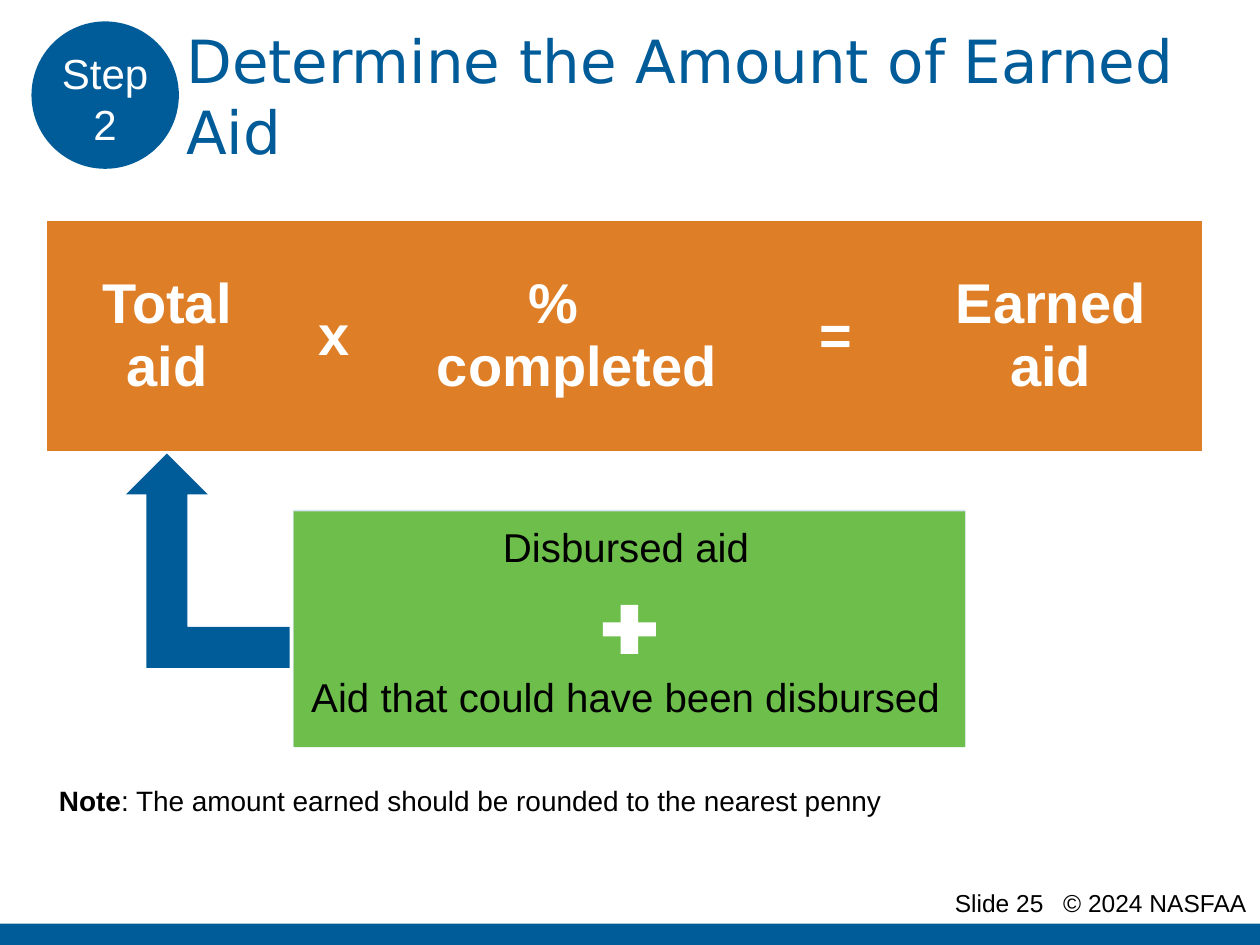
from dataclasses import dataclass

from lxml import etree
from pptx import Presentation
from pptx.dml.color import RGBColor
from pptx.enum.shapes import MSO_SHAPE
from pptx.enum.text import MSO_ANCHOR, PP_ALIGN
from pptx.oxml.ns import qn
from pptx.util import Inches, Pt

LEFT, CENTER = PP_ALIGN.LEFT, PP_ALIGN.CENTER
TOP, MIDDLE = MSO_ANCHOR.TOP, MSO_ANCHOR.MIDDLE
RECTANGLE, OVAL = MSO_SHAPE.RECTANGLE, MSO_SHAPE.OVAL
CROSS, BENT_ARROW = MSO_SHAPE.CROSS, MSO_SHAPE.BENT_UP_ARROW
NO_TABLE_STYLE = "{2D5ABB26-0587-4C30-8999-92F81FD0307C}"


@dataclass(frozen=True)
class Theme:
    """Colours, fonts and type sizes of the slide."""
    blue: str = "005B99"
    orange: str = "DE7E26"
    green: str = "6DBE4B"
    pale_blue: str = "D0D8E8"
    pale_line: str = "DBE5F1"
    white: str = "FFFFFF"
    black: str = "000000"
    body_font: str = "Arial"
    title_font: str = "DejaVu Sans"
    title_size: int = 34
    formula_size: int = 32
    step_size: int = 24
    aid_size: int = 23
    note_size: int = 16
    footer_size: int = 14


THEME = Theme()


def apply_format(target, values):
    """Set every named attribute on the target."""
    for name, value in values.items():
        setattr(target, name, value)


def insets(left, top, right, bottom):
    """Return the four margins of a text area as format values."""
    sides = ("left", "top", "right", "bottom")
    return {f"margin_{side}": Inches(gap)
            for side, gap in zip(sides, (left, top, right, bottom))}


def style_run(run, size, color, font=THEME.body_font, bold=False):
    """Give a run its font, size, weight and colour."""
    apply_format(run.font, {"name": font, "size": Pt(size), "bold": bold})
    run.font.color.rgb = RGBColor.from_string(color)


def write(paragraph, words, size, color, align=LEFT, **style):
    """Fill a paragraph with words in one style."""
    paragraph.text = words
    paragraph.alignment = align
    for run in paragraph.runs:
        style_run(run, size, color, **style)


def set_indent(paragraph, margin, indent=0):
    """Set the left margin and first-line indent of a paragraph."""
    properties = paragraph._p.get_or_add_pPr()
    properties.set("marL", str(Inches(margin)))
    properties.set("indent", str(Inches(indent)))


def add_filled(slide, kind, box, color):
    """Add a flat shape without outline."""
    shape = slide.shapes.add_shape(kind, *map(Inches, box))
    shape.shadow.inherit = False
    shape.fill.solid()
    shape.fill.fore_color.rgb = RGBColor.from_string(color)
    shape.line.fill.background()
    return shape


def add_text_area(slide, box, **values):
    """Add a wrapping text box and return its frame."""
    frame = slide.shapes.add_textbox(*map(Inches, box)).text_frame
    apply_format(frame, {"word_wrap": True, **values})
    return frame


def add_footer(slide, box):
    """Place the slide number, copyright line and bottom bar."""
    left, top, width, height = box
    add_filled(slide, RECTANGLE, (left, top + 0.33, width, height - 0.33), THEME.blue)
    frame = add_text_area(slide, (left + 7.48, top, 2.52, 0.25), margin_right=0)
    line = frame.paragraphs[0]
    tabs = etree.SubElement(line._p.get_or_add_pPr(), qn("a:tabLst"))
    etree.SubElement(tabs, qn("a:tab"), pos=str(Inches(0.86)), algn="l")
    write(line, "Slide 25\t© 2024 NASFAA", THEME.footer_size, THEME.black)


def add_heading(slide, box):
    """Place the step badge and the title beside it."""
    left, top, width, height = box
    badge = add_filled(slide, OVAL, (left, top, height, height), THEME.blue)
    apply_format(badge.text_frame, {"word_wrap": True, "vertical_anchor": MIDDLE,
                                    **insets(0, 0.1, 0, 0.05)})
    write(badge.text_frame.paragraphs[0], "Step 2", THEME.step_size, THEME.white, CENTER)
    title_left = left + height - 0.04
    title = add_text_area(slide, (title_left, top, left + width - title_left, height),
                          vertical_anchor=MIDDLE)
    write(title.paragraphs[0], "Determine the Amount of Earned Aid",
          THEME.title_size, THEME.blue, font=THEME.title_font)


def add_formula(slide, box):
    """Place the earned aid formula as a one-row table."""
    terms = (("Total\vaid", 1.91), ("x", 0.75), ("%\vcompleted", 3.1),
             ("=", 1.01), ("Earned\vaid", 2.4))
    table = slide.shapes.add_table(1, len(terms), *map(Inches, box)).table
    apply_format(table, {"first_row": False, "horz_banding": False})
    table._tbl.tblPr.find(qn("a:tableStyleId")).text = NO_TABLE_STYLE
    for column, cell, (term, width) in zip(table.columns, table.rows[0].cells, terms):
        column.width = Inches(width)
        cell.fill.solid()
        cell.fill.fore_color.rgb = RGBColor.from_string(THEME.orange)
        apply_format(cell, {"vertical_anchor": MIDDLE, **insets(0.07, 0, 0.07, 0)})
        write(cell.text_frame.paragraphs[0], term, THEME.formula_size,
              THEME.white, CENTER, bold=True)
    percent = table.cell(0, 2)
    apply_format(percent, insets(0, 0, 0.37, 0))
    set_indent(percent.text_frame.paragraphs[0], 0.37, -0.37)


def add_total_aid(slide, box):
    """Place the panel that sums the two kinds of aid."""
    left, top, width, height = box
    backing = add_filled(slide, RECTANGLE, (left, top - 0.01, width, height), THEME.pale_blue)
    backing.line.color.rgb = RGBColor.from_string(THEME.pale_line)
    backing.line.width = Pt(0.75)
    for color in backing._element.spPr.iter(qn("a:srgbClr")):
        etree.SubElement(color, qn("a:alpha"), val="90000")
    panel = add_filled(slide, RECTANGLE, box, THEME.green)
    frame = panel.text_frame
    apply_format(frame, {"word_wrap": True, "vertical_anchor": TOP,
                         **insets(0.13, 0.13, 0.18, 0.2)})
    disbursed, could_have_been = frame.paragraphs[0], frame.add_paragraph()
    for line, words in ((disbursed, "Disbursed aid"),
                        (could_have_been, "Aid that could have been disbursed")):
        write(line, words, THEME.aid_size, THEME.black, CENTER)
        line.line_spacing = 0.9
    could_have_been.space_before = Pt(61)
    plus_width, plus_height = 0.42, 0.39
    plus = add_filled(slide, CROSS, (left + (width - plus_width) / 2,
                                     top + (height - plus_height) / 2,
                                     plus_width, plus_height), THEME.white)
    plus.adjustments[0] = 0.36


def add_arrow(slide, box):
    """Place the bent arrow from the aid panel to the formula."""
    arrow = add_filled(slide, BENT_ARROW, box, THEME.blue)
    arrow._element.spPr.xfrm.set("flipH", "1")


def add_note(slide, box):
    """Place the rounding note with its bold lead word."""
    line = add_text_area(slide, box).paragraphs[0]
    set_indent(line, 0.12)
    for words, bold in (("Note", True),
                        (": The amount earned should be rounded to the nearest penny", False)):
        run = line.add_run()
        run.text = words
        style_run(run, THEME.note_size, THEME.black, bold=bold)


def main():
    """Build and save the slide."""
    deck = Presentation()
    apply_format(deck, {"slide_width": Inches(10), "slide_height": Inches(7.5)})
    slide = deck.slides.add_slide(deck.slide_layouts[6])
    add_footer(slide, (0, 7, 10, 0.5))
    add_heading(slide, (0.25, 0.17, 9.38, 1.17))
    add_formula(slide, (0.37, 1.75, 9.17, 1.83))
    add_total_aid(slide, (2.33, 4.06, 5.33, 1.87))
    add_note(slide, (0.25, 6.17, 9.33, 0.37))
    add_arrow(slide, (1, 3.6, 1.3, 1.7))
    deck.save("out.pptx")


if __name__ == "__main__":
    main()
